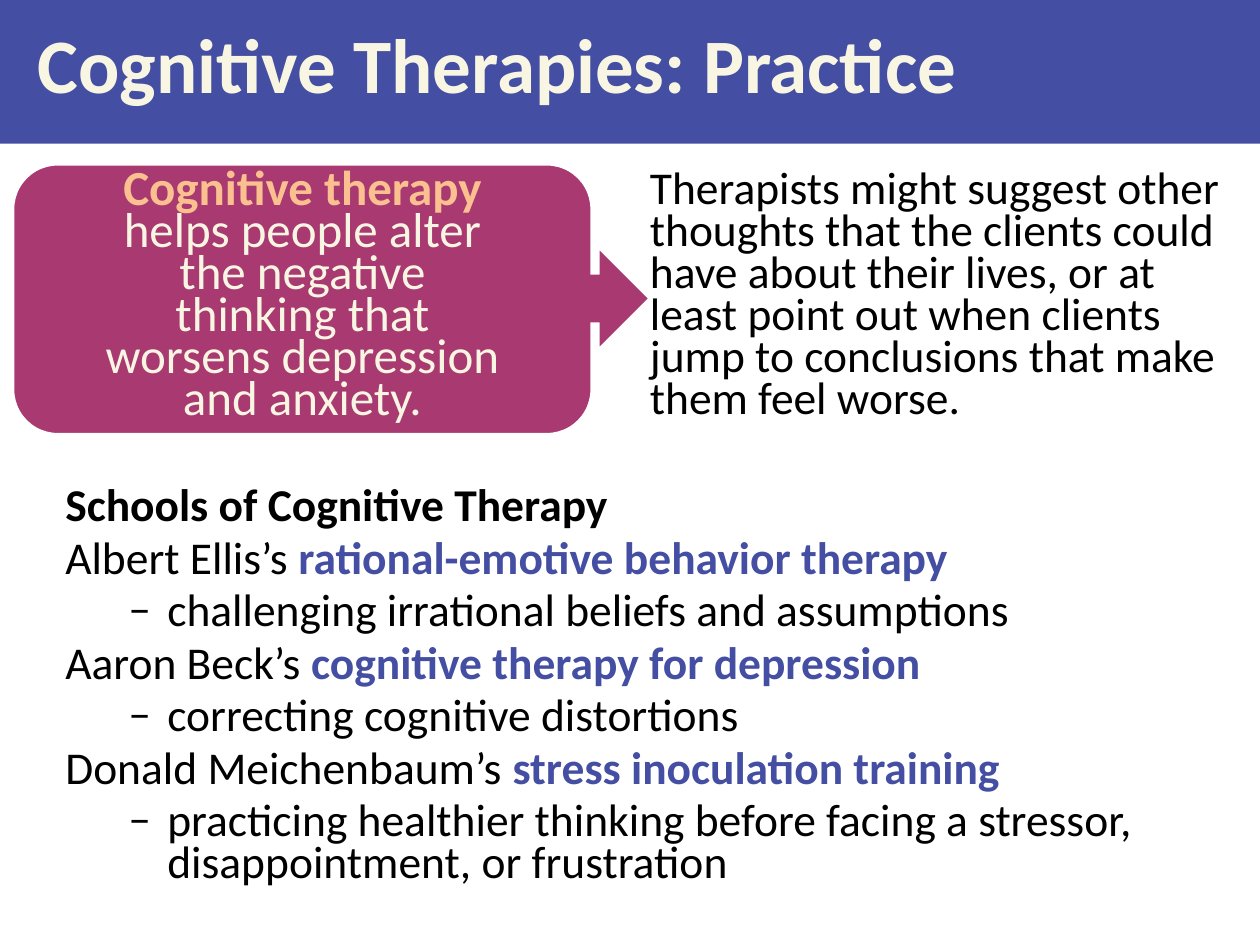
from lxml import etree
from pptx import Presentation
from pptx.dml.color import RGBColor
from pptx.enum import shapes, text
from pptx.oxml import ns
from pptx.util import Inches, Pt

BLUE, PLUM, CREAM = "444EA2", "A93971", "F8F6E3"
PEACH, BLACK, WHITE = "FAC090", "000000", "FFFFFF"
KIND = shapes.MSO_SHAPE

SCHOOLS = [
    ("Albert Ellis’s ", "rational-emotive behavior therapy",
     "challenging irrational beliefs and assumptions"),
    ("Aaron Beck’s ", "cognitive therapy for depression",
     "correcting cognitive distortions"),
    ("Donald Meichenbaum’s ", "stress inoculation training",
     "practicing healthier thinking before facing a stressor, "
     "disappointment, or frustration"),
]


def color(code):
    return RGBColor.from_string(code)


def add_block(slide, kind, box, fill, line=None):
    block = slide.shapes.add_shape(kind, *map(Inches, box))
    block.shadow.inherit = False
    block.fill.solid()
    block.fill.fore_color.rgb = color(fill)
    if line:
        block.line.color.rgb = color(line)
        block.line.width = Pt(2)
    else:
        block.line.fill.background()
    return block


def set_frame(frame, insets, anchor):
    """Wrap the text, with insets in the order left, top, right, bottom."""
    frame.word_wrap = True
    frame.vertical_anchor = anchor
    (frame.margin_left, frame.margin_top,
     frame.margin_right, frame.margin_bottom) = map(Inches, insets)


def add_text(slide, box):
    frame = slide.shapes.add_textbox(*map(Inches, box)).text_frame
    set_frame(frame, (0.1, 0.05, 0.1, 0.05), text.MSO_ANCHOR.TOP)
    return frame


def write(para, parts, size=26, pitch=24, after=6, align=text.PP_ALIGN.LEFT):
    """Fill a paragraph with parts of (words, colour, bold)."""
    para.alignment = align
    para.line_spacing = Pt(pitch)
    para.space_before, para.space_after = Pt(0), Pt(after)
    for words, code, bold in parts:
        run = para.add_run()
        run.text = words
        run.font.name = "Calibri"
        run.font.size = Pt(size)
        run.font.bold = bold
        run.font.color.rgb = color(code)


def add_dash(para):
    """Give the paragraph a hanging dash."""
    para.level = 1
    props = para._p.get_or_add_pPr()
    props.set("marL", str(Inches(0.81)))
    props.set("indent", str(Inches(-0.31)))
    etree.SubElement(props, ns.qn("a:buFont")).set("typeface", "Calibri")
    etree.SubElement(props, ns.qn("a:buChar")).set("char", "–")


def add_title(slide):
    frame = add_block(slide, KIND.RECTANGLE, (0, 0, 10, 1.14), BLUE).text_frame
    set_frame(frame, (0.3, 0.05, 0.1, 0.05), text.MSO_ANCHOR.MIDDLE)
    write(frame.paragraphs[0], [("Cognitive Therapies: Practice", CREAM, True)],
          size=44, pitch=42, after=0)


def add_aim(slide):
    frame = add_block(slide, KIND.ROUNDED_RECTANGLE, (0.1, 1.3, 4.6, 2.15),
                      PLUM, WHITE).text_frame
    set_frame(frame, (0.56,) * 4, text.MSO_ANCHOR.MIDDLE)
    write(frame.paragraphs[0],
          [("Cognitive therapy ", PEACH, True),
           ("helps people alter the negative thinking that worsens "
            "depression and anxiety.", CREAM, False)],
          size=28, after=0, align=text.PP_ALIGN.CENTER)
    add_block(slide, KIND.RIGHT_ARROW, (4.33, 1.99, 0.81, 0.76), PLUM)


def add_advice(slide):
    frame = add_text(slide, (5.06, 1.31, 4.83, 2.2))
    write(frame.paragraphs[0],
          [("Therapists might suggest other thoughts that the clients could "
            "have about their lives, or at least point out when clients jump "
            "to conclusions that make them feel worse.", BLACK, False)])


def add_schools(slide):
    frame = add_text(slide, (0.42, 3.83, 9.1, 3.51))
    write(frame.paragraphs[0], [("Schools of Cognitive Therapy", BLACK, True)])
    for founder, school, method in SCHOOLS:
        write(frame.add_paragraph(),
              [(founder, BLACK, False), (school, BLUE, True)])
        para = frame.add_paragraph()
        write(para, [(method, BLACK, False)])
        add_dash(para)


def main():
    deck = Presentation()
    deck.slide_width, deck.slide_height = Inches(10), Inches(7.5)
    slide = deck.slides.add_slide(deck.slide_layouts[6])
    add_title(slide)
    add_advice(slide)
    add_aim(slide)
    add_schools(slide)
    deck.save("out.pptx")


if __name__ == "__main__":
    main()
